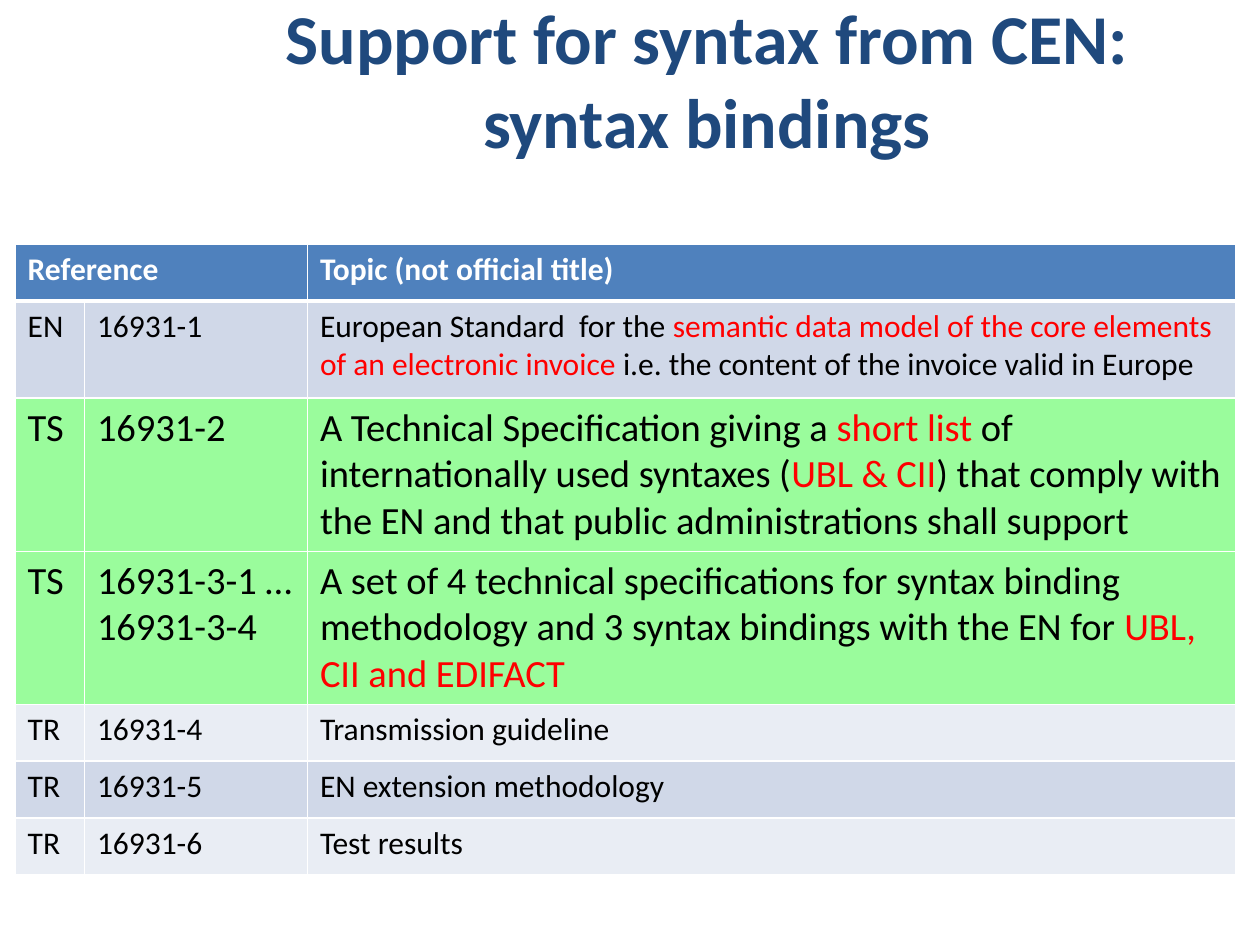
from lxml import etree
from pptx import Presentation
from pptx.dml.color import RGBColor
from pptx.enum.text import MSO_ANCHOR, PP_ALIGN
from pptx.oxml.ns import qn
from pptx.util import Inches, Pt

MIDDLE = MSO_ANCHOR.MIDDLE
CENTER = PP_ALIGN.CENTER
FONT = "Calibri"
TITLE_ONLY = 5
COLORS = {
    "title": "1F497D",
    "header": "4F81BD",
    "band_dark": "D0D8E8",
    "band_light": "E9EDF4",
    "highlight": "9AFC9C",
    "text": "000000",
    "red": "FF0000",
    "white": "FFFFFF",
}
COLUMN_WIDTHS = [0.55, 1.77, 7.37]
# Fill, text size, row height and cell texts; words between asterisks are red.
ROWS = [
    ("header", 18, 0.45, ["Reference", "", "Topic (not official title)"]),
    ("band_dark", 18, 0.77, ["EN", "16931-1",
        "European Standard  for the *semantic data model of the core elements "
        "of an electronic invoice *i.e. the content of the invoice valid in Europe"]),
    ("highlight", 22, 1.21, ["TS", "16931-2",
        "A Technical Specification giving a *short list *of internationally used "
        "syntaxes (*UBL & CII*) that comply with the EN and that public "
        "administrations shall support"]),
    ("highlight", 22, 1.21, ["TS", "16931-3-1 …\n16931-3-4",
        "A set of 4 technical specifications for syntax binding methodology and "
        "3 syntax bindings with the EN for *UBL, CII and EDIFACT*"]),
    ("band_light", 18, 0.45, ["TR", "16931-4", "Transmission guideline"]),
    ("band_dark", 18, 0.45, ["TR", "16931-5", "EN extension methodology"]),
    ("band_light", 18, 0.45, ["TR", "16931-6", "Test results"]),
]


class SlideBuilder:
    def __init__(self, page):
        self.page = page

    def style(self, span, size, color, bold=False):
        span.font.name = FONT
        span.font.size = Pt(size)
        span.font.bold = bold
        span.font.color.rgb = RGBColor.from_string(COLORS[color])

    def title(self, text, left, top, width, height):
        box = self.page.shapes.title
        box.left, box.top = Inches(left), Inches(top)
        box.width, box.height = Inches(width), Inches(height)
        frame = box.text_frame
        frame.text = text
        frame.word_wrap = True
        frame.vertical_anchor = MIDDLE
        para = frame.paragraphs[0]
        para.alignment = CENTER
        for span in para.runs:
            self.style(span, 40, "title", bold=True)

    def borders(self, cell, bottom_width):
        """Draw white lines around a cell, ahead of its fill in the XML."""
        properties = cell._tc.get_or_add_tcPr()
        widths = {"a:lnL": 1, "a:lnR": 1, "a:lnT": 1, "a:lnB": bottom_width}
        for position, (tag, width) in enumerate(widths.items()):
            line = etree.Element(qn(tag), w=str(Pt(width)))
            fill = etree.SubElement(line, qn("a:solidFill"))
            etree.SubElement(fill, qn("a:srgbClr"), val=COLORS["white"])
            properties.insert(position, line)

    def cell(self, cell, text, fill, size):
        is_header = fill == "header"
        cell.fill.solid()
        cell.fill.fore_color.rgb = RGBColor.from_string(COLORS[fill])
        self.borders(cell, 3 if is_header else 1)
        para = cell.text_frame.paragraphs[0]
        base_color = "white" if is_header else "text"
        for part_number, part in enumerate(text.split("*")):
            color = "red" if part_number % 2 else base_color
            for line_number, line in enumerate(part.split("\n")):
                if line_number:
                    para.add_line_break()
                if line:
                    span = para.add_run()
                    span.text = line
                    self.style(span, size, color, bold=is_header)

    def table(self, rows, column_widths, left, top):
        height = sum(row[2] for row in rows)
        table = self.page.shapes.add_table(
            len(rows), len(column_widths), Inches(left), Inches(top),
            Inches(sum(column_widths)), Inches(height)).table
        for column, width in zip(table.columns, column_widths):
            column.width = Inches(width)
        for row, (fill, size, row_height, texts) in zip(table.rows, rows):
            row.height = Inches(row_height)
            for cell, text in zip(row.cells, texts):
                self.cell(cell, text, fill, size)
        table.cell(0, 0).merge(table.cell(0, 1))


def main():
    deck = Presentation()
    deck.slide_width, deck.slide_height = Inches(10), Inches(7.5)
    builder = SlideBuilder(deck.slides.add_slide(deck.slide_layouts[TITLE_ONLY]))
    builder.title("Support for syntax from CEN:\vsyntax bindings", 1.22, 0, 8.78, 1.25)
    builder.table(ROWS, COLUMN_WIDTHS, 0.12, 1.94)
    deck.save("out.pptx")


if __name__ == "__main__":
    main()
